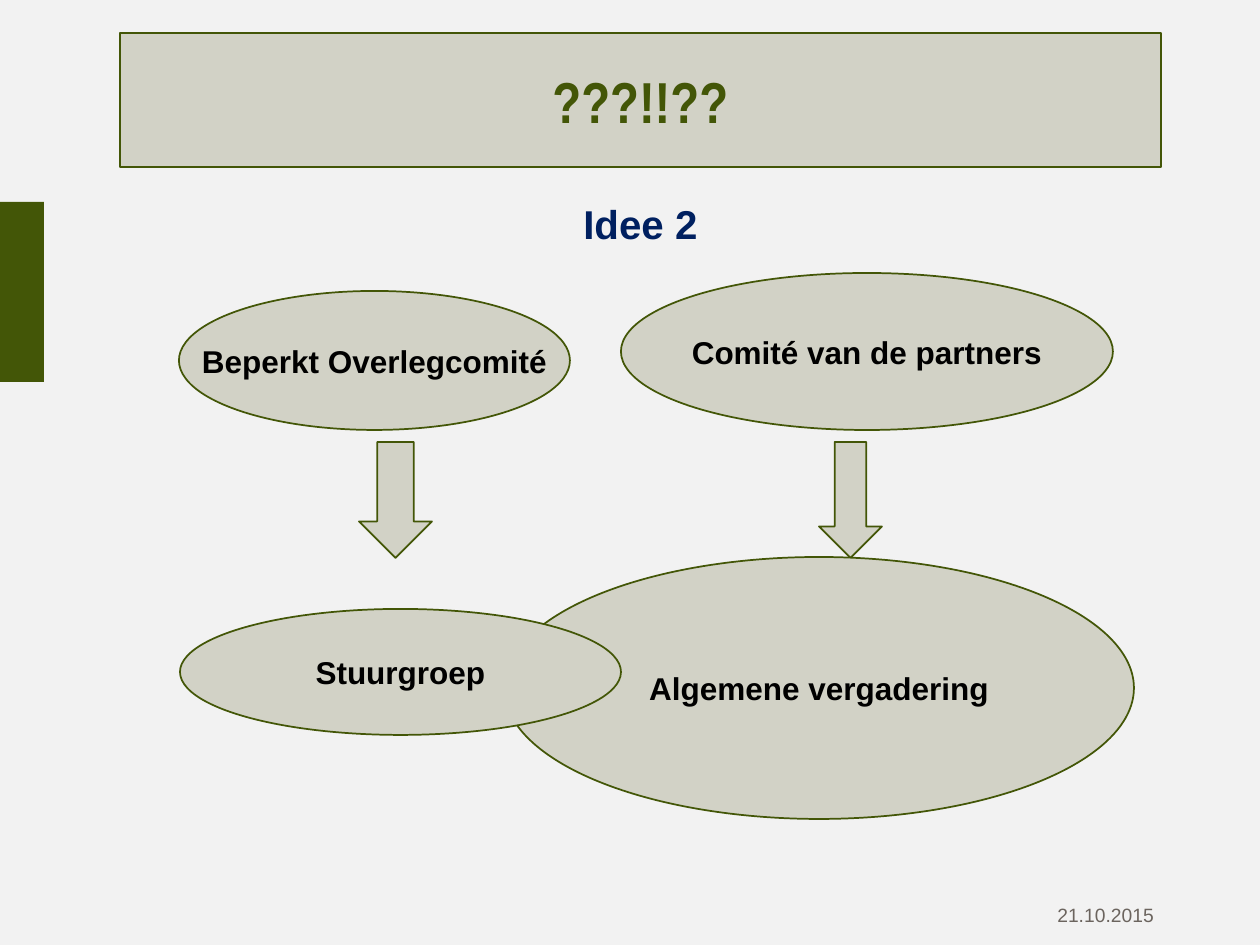
import pptx
import pptx.util
import pptx.dml.color
import pptx.enum.shapes
import pptx.enum.text

RGBColor = pptx.dml.color.RGBColor
SHAPE = pptx.enum.shapes.MSO_SHAPE
ALIGN = pptx.enum.text.PP_ALIGN
ANCHOR = pptx.enum.text.MSO_ANCHOR

PX = 914400 // 126
BACKGROUND = RGBColor(0xF2, 0xF2, 0xF2)
STONE = RGBColor(0xD2, 0xD2, 0xC6)
OLIVE = RGBColor(0x43, 0x56, 0x07)
NAVY = RGBColor(0x00, 0x20, 0x60)
BLACK = RGBColor(0x00, 0x00, 0x00)
GREY = RGBColor(0x6B, 0x64, 0x5E)


def scaled(box):
    return [length * PX for length in box]


def add_block(slide, kind, box, fill, outline=None):
    block = slide.shapes.add_shape(kind, *scaled(box))
    block.shadow.inherit = False
    block.fill.solid()
    block.fill.fore_color.rgb = fill
    if outline is None:
        block.line.fill.background()
    else:
        block.line.color.rgb = outline
        block.line.width = pptx.util.Pt(1)
    return block


def write(frame, text, size, color, bold=True, font="Arial", align=ALIGN.CENTER):
    frame.text = text
    paragraph = frame.paragraphs[0]
    paragraph.alignment = align
    run_font = paragraph.runs[0].font
    run_font.name = font
    run_font.size = pptx.util.Pt(size)
    run_font.bold = bold
    run_font.color.rgb = color


def remove_margins(frame):
    frame.margin_left = frame.margin_top = 0
    frame.margin_right = frame.margin_bottom = 0


def add_labelled(slide, kind, box, text, size=18, color=BLACK, font="Arial"):
    """Outlined stone shape with its text on one centred line."""
    frame = add_block(slide, kind, box, STONE, OLIVE).text_frame
    frame.word_wrap = False
    frame.vertical_anchor = ANCHOR.MIDDLE
    write(frame, text, size, color, font=font)


def add_heading_panel(slide, box, text):
    frame = add_block(slide, SHAPE.RECTANGLE, box, BACKGROUND).text_frame
    frame.word_wrap = True
    frame.vertical_anchor = ANCHOR.TOP
    remove_margins(frame)
    write(frame, text, 23, NAVY)
    frame.paragraphs[0].line_spacing = pptx.util.Pt(28)


def add_date(slide, box, text):
    frame = slide.shapes.add_textbox(*scaled(box)).text_frame
    frame.word_wrap = True
    remove_margins(frame)
    write(frame, text, 11, GREY, bold=False, align=ALIGN.RIGHT)


def main():
    deck = pptx.Presentation()
    deck.slide_width, deck.slide_height = scaled((1260, 945))
    slide = deck.slides.add_slide(deck.slide_layouts[6])
    slide.background.fill.solid()
    slide.background.fill.fore_color.rgb = BACKGROUND

    add_block(slide, SHAPE.RECTANGLE, (0, 202, 44, 180), OLIVE)
    add_heading_panel(slide, (105, 199, 1071, 746), "Idee 2")
    add_date(slide, (1018, 903, 136, 33), "21.10.2015")

    for box in ((359, 442, 73, 116), (819, 442, 63, 116)):
        add_block(slide, SHAPE.DOWN_ARROW, box, STONE, OLIVE)

    groups = (
        ("Beperkt Overlegcomité", (179, 291, 391, 139)),
        ("Comité van de partners", (621, 273, 492, 157)),
        ("Algemene vergadering", (504, 557, 630, 262)),
        ("Stuurgroep", (180, 609, 441, 126)),
    )
    for name, box in groups:
        add_labelled(slide, SHAPE.OVAL, box, name)

    add_labelled(slide, SHAPE.RECTANGLE, (120, 33, 1041, 134), "???!!??",
                 size=33, color=OLIVE, font="Arial Narrow")
    deck.save("out.pptx")


if __name__ == "__main__":
    main()
